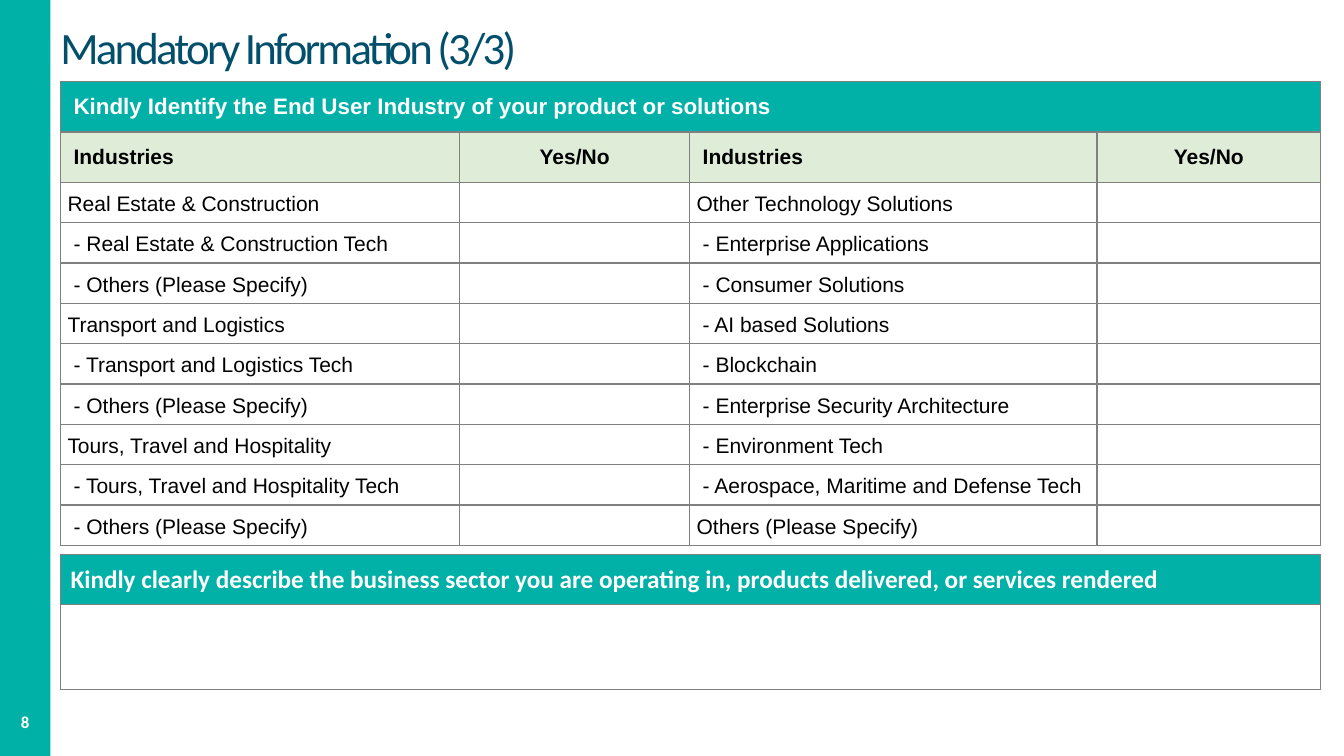
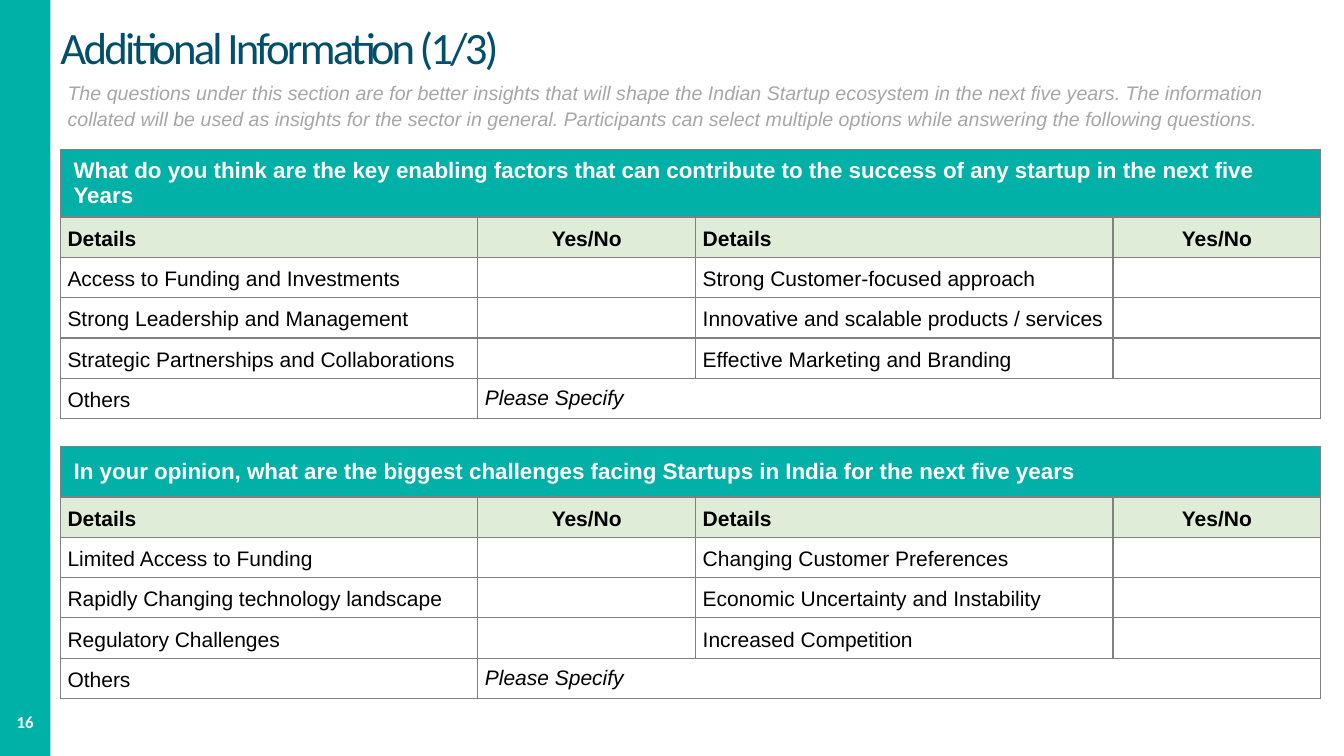
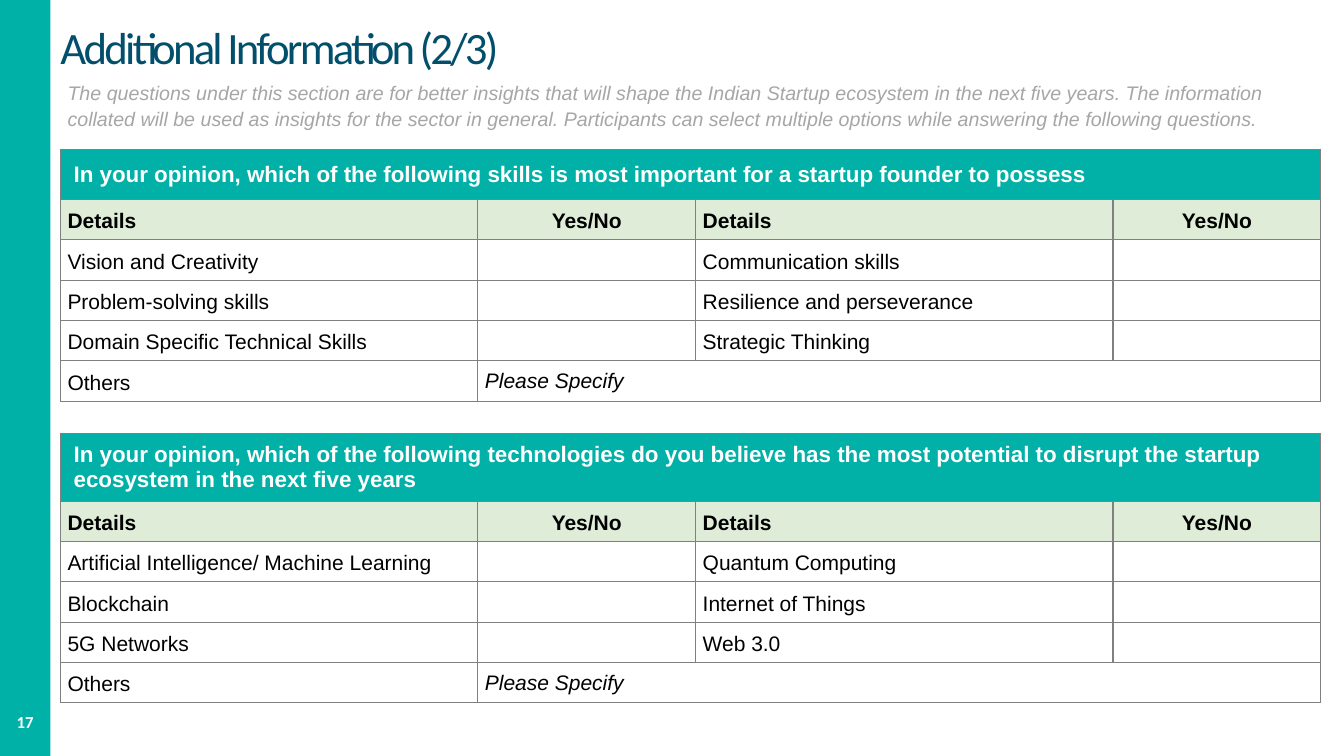
import dataclasses

import lxml.etree
import pptx
import pptx.dml.color
import pptx.enum.shapes
import pptx.enum.text
import pptx.oxml.ns
import pptx.util

Inches = pptx.util.Inches
Pt = pptx.util.Pt
RGBColor = pptx.dml.color.RGBColor
CENTER = pptx.enum.text.PP_ALIGN.CENTER
MIDDLE = pptx.enum.text.MSO_ANCHOR.MIDDLE
TOP = pptx.enum.text.MSO_ANCHOR.TOP


def insets(horizontal, vertical, left=None):
    return {
        "margin_left": Inches(horizontal if left is None else left),
        "margin_right": Inches(horizontal),
        "margin_top": Inches(vertical),
        "margin_bottom": Inches(vertical),
    }


def text_style(size, color, name="Arial", bold=False, italic=False, spacing=1.0,
               align=None, frame=None, anchor=MIDDLE, fill="FFFFFF"):
    return {
        "font": {"size": Pt(size), "name": name, "bold": bold, "italic": italic},
        "color": color,
        "paragraph": {"line_spacing": spacing, "alignment": align},
        "frame": {**(frame or insets(0.07, 0)), "vertical_anchor": anchor},
        "fill": fill,
    }


@dataclasses.dataclass(frozen=True)
class Theme:
    width: float = 13.33
    height: float = 7.5
    band_width: float = 0.5
    left: float = 0.6
    content_width: float = 12.5
    header_row: float = 0.5
    tall_header_row: float = 0.66
    row: float = 0.4
    band: str = "00B1A8"
    border: str = "808080"
    title_tracking: int = -200
    styles: dict = dataclasses.field(default_factory=lambda: {
        "title": text_style(32, "024F6C", "Calibri", spacing=0.7, frame=insets(0, 0)),
        "page": text_style(12, "FFFFFF", "Calibri", bold=True, align=CENTER,
                           frame=insets(0.1, 0.05), anchor=TOP),
        "note": text_style(14, "A6A6A6", italic=True, spacing=1.15, anchor=TOP),
        "question": text_style(16, "FFFFFF", bold=True, frame=insets(0.13, 0.07),
                               fill="01B0A7"),
        "sector": text_style(18, "FFFFFF", "Calibri", bold=True,
                             frame=insets(0.1, 0.05), fill="01B0A7"),
        "wide_head": text_style(15, "000000", bold=True, frame=insets(0.13, 0.07),
                                fill="DFEDD8"),
        "wide_head_center": text_style(15, "000000", bold=True, align=CENTER,
                                       frame=insets(0.13, 0.07), fill="DFEDD8"),
        "head": text_style(15, "000000", bold=True, spacing=1.15, fill="DFEDD8"),
        "head_center": text_style(15, "000000", bold=True, spacing=1.15, align=CENTER,
                                  fill="DFEDD8"),
        "body": text_style(15, "000000", spacing=1.15),
        "sub_item": text_style(15, "000000", spacing=1.15,
                               frame=insets(0.07, 0, left=0.13)),
        "specify": text_style(15, "000000", italic=True),
    })


THEME = Theme()
INDUSTRY_COLUMNS = (3.96, 2.28, 4.04, 2.22)
SURVEY_COLUMNS = (4.14, 2.16, 4.14, 2.06)
NOTE = ("The questions under this section are for better insights that will shape the "
        "Indian Startup ecosystem in the next five years. The information collated will "
        "be used as insights for the sector in general. Participants can select multiple "
        "options while answering the following questions.")

INDUSTRIES = [
    ("Real Estate & Construction", "Other Technology Solutions"),
    ("- Real Estate & Construction Tech", "- Enterprise Applications"),
    ("- Others (Please Specify)", "- Consumer Solutions"),
    ("Transport and Logistics", "- AI based Solutions"),
    ("- Transport and Logistics Tech", "- Blockchain"),
    ("- Others (Please Specify)", "- Enterprise Security Architecture"),
    ("Tours, Travel and Hospitality", "- Environment Tech"),
    ("- Tours, Travel and Hospitality Tech", "- Aerospace, Maritime and Defense Tech"),
    ("- Others (Please Specify)", "Others (Please Specify)"),
]

# Each survey: top, header row height, question, answer pairs
SURVEY_SLIDES = [
    ("Additional Information (1/3)", 16, [
        (1.48, THEME.tall_header_row,
         "What do you think are the key enabling factors that can contribute to the "
         "success of any startup in the next five Years",
         [("Access to Funding and Investments", "Strong Customer-focused approach"),
          ("Strong Leadership and Management",
           "Innovative and scalable products / services"),
          ("Strategic Partnerships and Collaborations",
           "Effective Marketing and Branding")]),
        (4.43, THEME.header_row,
         "In your opinion, what are the biggest challenges facing Startups in India "
         "for the next five years",
         [("Limited Access to Funding", "Changing Customer Preferences"),
          ("Rapidly Changing technology landscape",
           "Economic Uncertainty and Instability"),
          ("Regulatory Challenges", "Increased Competition")]),
    ]),
    ("Additional Information (2/3)", 17, [
        (1.48, THEME.header_row,
         "In your opinion, which of the following skills is most important for a "
         "startup founder to possess",
         [("Vision and Creativity", "Communication skills"),
          ("Problem-solving skills", "Resilience and perseverance"),
          ("Domain Specific Technical Skills", "Strategic Thinking")]),
        (4.3, THEME.tall_header_row,
         "In your opinion, which of the following technologies do you believe has the "
         "most potential to disrupt the startup ecosystem in the next five years",
         [("Artificial Intelligence/ Machine Learning", "Quantum Computing"),
          ("Blockchain", "Internet of Things"),
          ("5G Networks", "Web 3.0")]),
    ]),
]


def set_attributes(target, values):
    for name, value in values.items():
        setattr(target, name, value)


def write_text(paragraph, text, style):
    set_attributes(paragraph, style["paragraph"])
    run = paragraph.add_run()
    run.text = text
    set_attributes(run.font, style["font"])
    run.font.color.rgb = RGBColor.from_string(style["color"])
    return run


def add_text(slide, box, text, style_name):
    style = THEME.styles[style_name]
    frame = slide.shapes.add_textbox(*map(Inches, box)).text_frame
    frame.word_wrap = True
    set_attributes(frame, style["frame"])
    return write_text(frame.paragraphs[0], text, style)


def add_borders(cell):
    properties = cell._tc.get_or_add_tcPr()
    for side in ("lnL", "lnR", "lnT", "lnB"):
        line = lxml.etree.SubElement(properties, pptx.oxml.ns.qn("a:" + side),
                                     w=str(Pt(1)))
        fill = lxml.etree.SubElement(line, pptx.oxml.ns.qn("a:solidFill"))
        lxml.etree.SubElement(fill, pptx.oxml.ns.qn("a:srgbClr"), val=THEME.border)


def add_grid(slide, top, columns, heights, rows, bordered=True):
    """Rows hold (text, style name) pairs; a short row's last cell spans the rest."""
    table = slide.shapes.add_table(
        len(rows), len(columns), Inches(THEME.left), Inches(top),
        Inches(sum(columns)), Inches(sum(heights))).table
    set_attributes(table, {"first_row": False, "horz_banding": False})
    for column, width in zip(table.columns, columns):
        column.width = Inches(width)
    for index, (entries, height) in enumerate(zip(rows, heights)):
        table.rows[index].height = Inches(height)
        missing = len(columns) - len(entries)
        if missing:
            table.cell(index, len(entries) - 1).merge(table.cell(index, len(columns) - 1))
        for position, (text, style_name) in enumerate(entries + [("", "body")] * missing):
            style = THEME.styles[style_name]
            cell = table.cell(index, position)
            if bordered:
                add_borders(cell)
            cell.fill.solid()
            cell.fill.fore_color.rgb = RGBColor.from_string(style["fill"])
            set_attributes(cell, style["frame"])
            if text:
                write_text(cell.text_frame.paragraphs[0], text, style)


def answer_row(pair):
    """Place each answer beside an empty Yes/No cell."""
    return [entry for text in pair
            for entry in ((text, "sub_item" if text.startswith("- ") else "body"),
                          ("", "body"))]


def heading_row(label, style_name):
    return [(label, style_name), ("Yes/No", style_name + "_center")] * 2


def add_survey(slide, top, header_height, question, answers):
    rows = [[(question, "question")], heading_row("Details", "head"),
            *map(answer_row, answers),
            [("Others", "body"), ("Please Specify", "specify")]]
    heights = [header_height] + [THEME.row] * (len(rows) - 1)
    add_grid(slide, top, SURVEY_COLUMNS, heights, rows)


def add_base(presentation, title, page):
    """Start a slide with its side band, page number and title."""
    slide = presentation.slides.add_slide(presentation.slide_layouts[6])
    band = slide.shapes.add_shape(
        pptx.enum.shapes.MSO_SHAPE.RECTANGLE, 0, 0,
        Inches(THEME.band_width), Inches(THEME.height))
    band.shadow.inherit = False
    band.fill.solid()
    band.fill.fore_color.rgb = RGBColor.from_string(THEME.band)
    band.line.fill.background()
    add_text(slide, (0, 7.01, THEME.band_width, 0.3), str(page), "page")
    run = add_text(slide, (THEME.left, 0.06, 12.26, 0.94), title, "title")
    run._r.get_or_add_rPr().set("spc", str(THEME.title_tracking))
    return slide


def add_industry_slide(presentation):
    slide = add_base(presentation, "Mandatory Information (3/3)", 8)
    rows = [[("Kindly Identify the End User Industry of your product or solutions",
              "question")],
            heading_row("Industries", "wide_head"), *map(answer_row, INDUSTRIES)]
    heights = [THEME.header_row] * 2 + [THEME.row] * len(INDUSTRIES)
    add_grid(slide, 0.81, INDUSTRY_COLUMNS, heights, rows)
    add_grid(slide, 5.5, [THEME.content_width], [THEME.header_row, 0.84],
             [[("Kindly clearly describe the business sector you are operating in, "
                "products delivered, or services rendered", "sector")],
              [("", "body")]])


def add_survey_slide(presentation, title, page, surveys):
    slide = add_base(presentation, title, page)
    add_grid(slide, 0.79, [THEME.content_width], [0.52], [[(NOTE, "note")]],
             bordered=False)
    for survey in surveys:
        add_survey(slide, *survey)


def main():
    presentation = pptx.Presentation()
    presentation.slide_width = Inches(THEME.width)
    presentation.slide_height = Inches(THEME.height)
    add_industry_slide(presentation)
    for content in SURVEY_SLIDES:
        add_survey_slide(presentation, *content)
    presentation.save("out.pptx")


if __name__ == "__main__":
    main()
